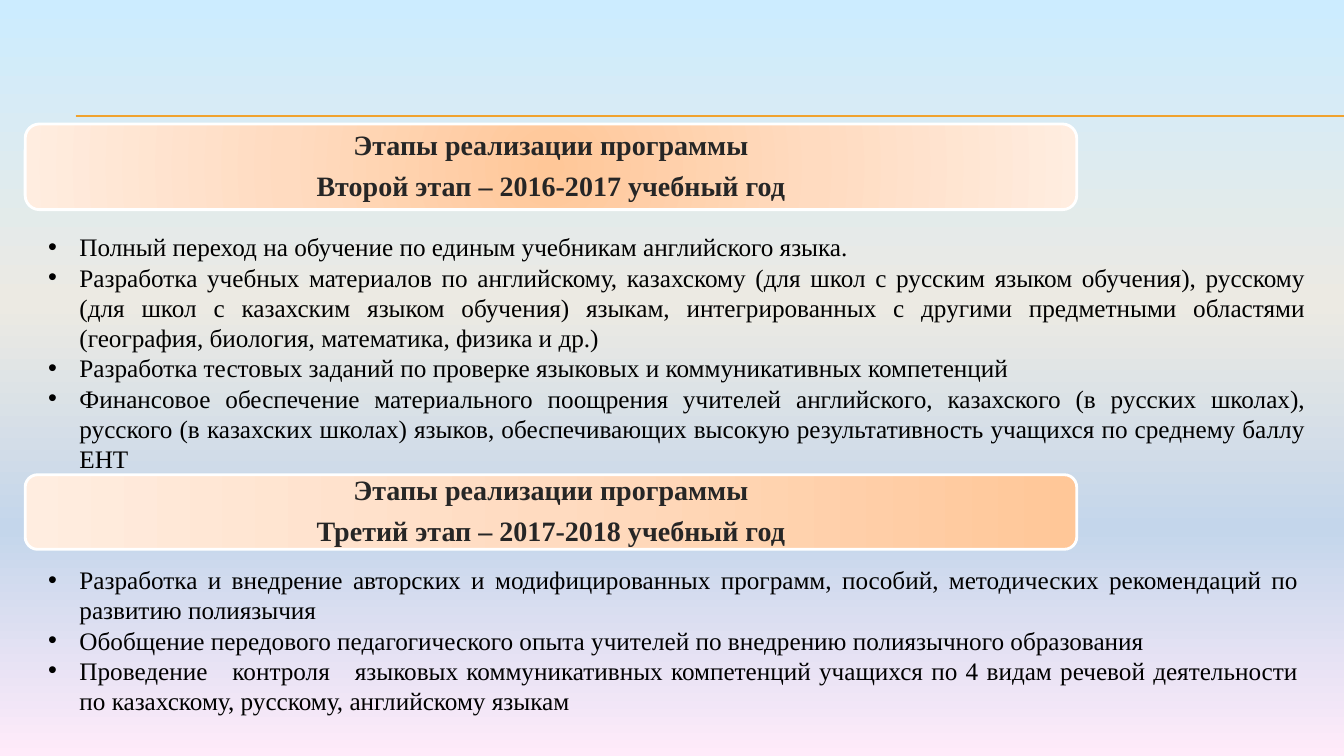
"""Build the slide on the second and third stages of the language programme."""
from lxml import etree
from pptx import Presentation
from pptx.dml.color import RGBColor
from pptx.enum import shapes, text
from pptx.oxml import ns
from pptx.util import Inches, Pt

FONT = "Times New Roman"
BLACK = RGBColor(0x00, 0x00, 0x00)
CHARCOAL = RGBColor(0x26, 0x26, 0x26)
WHITE = RGBColor(0xFF, 0xFF, 0xFF)
AMBER = RGBColor(0xF0, 0xA2, 0x2E)
SKY = RGBColor(0xCC, 0xEC, 0xFF)
SAND = RGBColor(0xEC, 0xEA, 0xE3)
BLUE = RGBColor(0xC4, 0xD6, 0xEB)
PINK = RGBColor(0xFF, 0xEB, 0xFA)
PEACH = RGBColor(0xFF, 0xC7, 0x98)
APRICOT = RGBColor(0xFF, 0xDB, 0xC0)
CREAM = RGBColor(0xFF, 0xED, 0xE0)

BACKGROUND_STOPS = [(0, SKY), (40, SAND), (70, BLUE), (100, PINK)]
BANNER_STOPS = [(0, PEACH), (50, APRICOT), (100, CREAM)]
DOWNWARD = '<a:lin ang="5400000" scaled="0"/>'
LEFTWARD = '<a:lin ang="10800000" scaled="0"/>'
RADIAL = '<a:path path="circle"><a:fillToRect l="50000" t="50000" r="50000" b="50000"/></a:path>'

STAGES = [
    {
        "title": "Второй этап – 2016-2017 учебный год",
        "banner": (1.23, 0.85),
        "direction": RADIAL,
        "body": (2.25, 12.67, 2.86),
        "points": [
            "Полный переход на обучение по единым учебникам английского языка.",
            "Разработка учебных материалов по английскому, казахскому (для школ с русским языком обучения), "
            "русскому (для школ с казахским языком обучения) языкам, интегрированных с другими предметными "
            "областями (география, биология, математика, физика и др.)",
            "Разработка тестовых заданий по проверке языковых и коммуникативных компетенций",
            "Финансовое обеспечение материального поощрения учителей английского, казахского (в русских школах), "
            "русского (в казахских школах) языков, обеспечивающих высокую результативность учащихся по среднему "
            "баллу ЕНТ",
        ],
    },
    {
        "title": "Третий этап – 2017-2018 учебный год",
        "banner": (4.71, 0.74),
        "direction": LEFTWARD,
        "body": (5.55, 12.6, 1.62),
        "points": [
            "Разработка и внедрение авторских и модифицированных программ, пособий, методических рекомендаций по "
            "развитию полиязычия",
            "Обобщение передового педагогического опыта учителей по внедрению полиязычного образования",
            "Проведение   контроля   языковых коммуникативных компетенций учащихся по 4 видам речевой "
            "деятельности по казахскому, русскому, английскому языкам",
        ],
    },
]


def apply_gradient(element, fill, stops, direction):
    fill.solid()
    solid = element.find(".//" + ns.qn("a:solidFill"))
    stop_xml = "".join(
        f'<a:gs pos="{position * 1000}"><a:srgbClr val="{color}"/></a:gs>' for position, color in stops
    )
    gradient = etree.fromstring(
        f'<a:gradFill {ns.nsdecls("a")} rotWithShape="1"><a:gsLst>{stop_xml}</a:gsLst>{direction}</a:gradFill>'
    )
    solid.getparent().replace(solid, gradient)


def write_lines(frame, lines, size, color, align, bold=False, spacing=None, after=0, bullet=False):
    frame.word_wrap = True
    for index, line in enumerate(lines):
        paragraph = frame.add_paragraph() if index else frame.paragraphs[0]
        paragraph.alignment = align
        paragraph.line_spacing = spacing
        paragraph.space_after = Pt(after)
        run = paragraph.add_run()
        run.text = line
        run.font.name = FONT
        run.font.size = Pt(size)
        run.font.bold = bold
        run.font.color.rgb = color
        if bullet:
            properties = paragraph._p.get_or_add_pPr()
            properties.set("marL", str(Inches(0.31)))
            properties.set("indent", str(Inches(-0.31)))
            etree.SubElement(properties, ns.qn("a:buFont")).set("typeface", "Arial")
            etree.SubElement(properties, ns.qn("a:buChar")).set("char", "•")


presentation = Presentation()
presentation.slide_width = Inches(13.33)
presentation.slide_height = Inches(7.5)
slide = presentation.slides.add_slide(presentation.slide_layouts[6])
apply_gradient(slide.element, slide.background.fill, BACKGROUND_STOPS, DOWNWARD)

for y in (1.15, 1.16):
    rule = slide.shapes.add_connector(
        shapes.MSO_CONNECTOR.STRAIGHT, Inches(0.75), Inches(y), Inches(13.33), Inches(y)
    )
    rule.line.color.rgb = AMBER
    rule.line.width = Pt(0.75)
    etree.SubElement(rule._element.spPr, ns.qn("a:effectLst"))

for stage in STAGES:
    top, height = stage["banner"]
    banner = slide.shapes.add_shape(
        shapes.MSO_SHAPE.ROUNDED_RECTANGLE, Inches(0.25), Inches(top), Inches(10.43), Inches(height)
    )
    banner.shadow.inherit = False
    apply_gradient(banner._element, banner.fill, BANNER_STOPS, stage["direction"])
    banner.line.color.rgb = WHITE
    banner.line.width = Pt(2)
    banner.text_frame.vertical_anchor = text.MSO_ANCHOR.MIDDLE
    write_lines(banner.text_frame, ["Этапы реализации программы", stage["title"]], size=20, color=CHARCOAL,
                align=text.PP_ALIGN.CENTER, bold=True, spacing=0.9, after=8)

    top, width, height = stage["body"]
    body = slide.shapes.add_textbox(Inches(0.38), Inches(top), Inches(width), Inches(height))
    write_lines(body.text_frame, stage["points"], size=18, color=BLACK,
                align=text.PP_ALIGN.JUSTIFY, bullet=True)

presentation.save("out.pptx")
